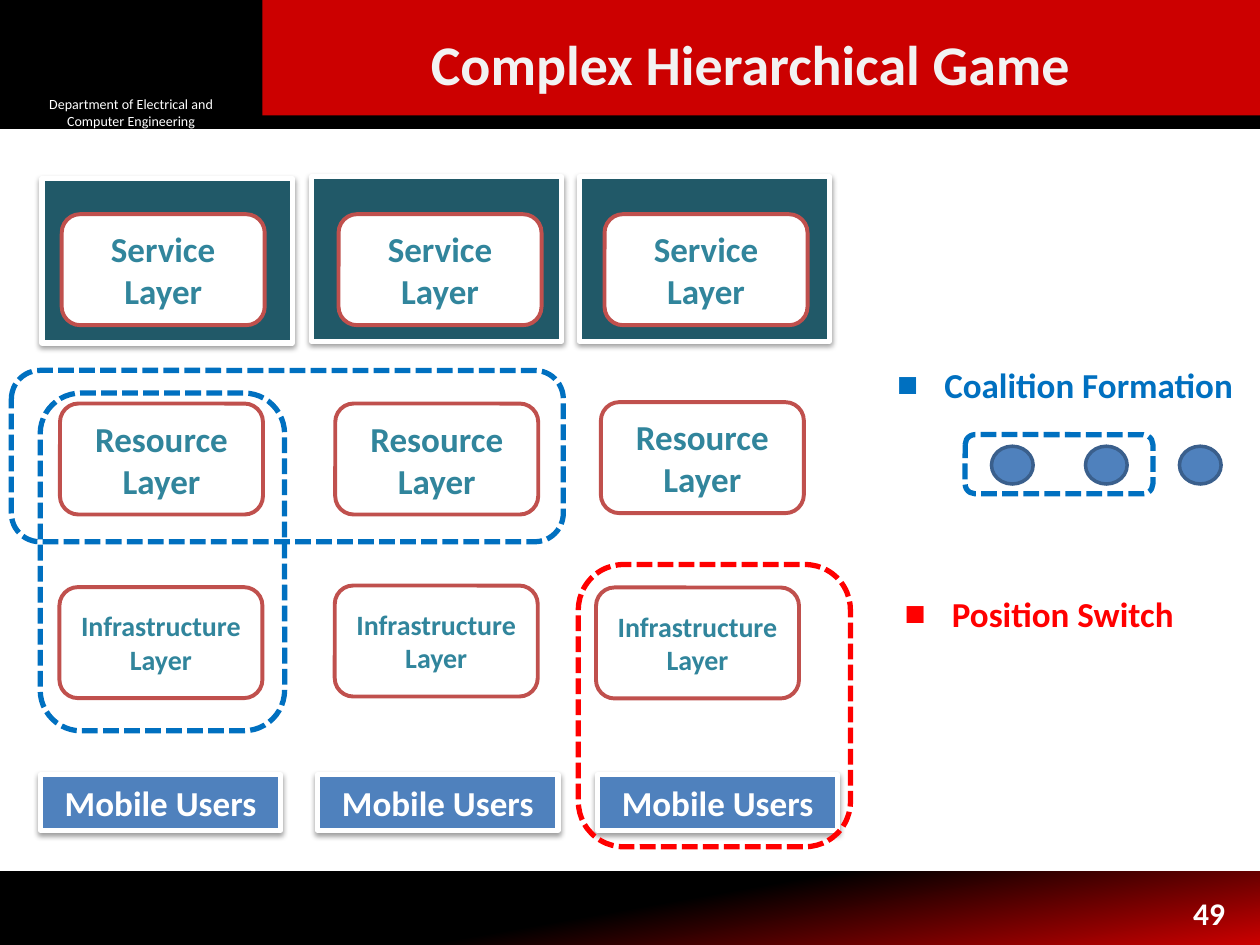
from dataclasses import dataclass

from lxml import etree
from pptx import Presentation
from pptx import util as u
from pptx.dml.color import RGBColor
from pptx.enum import dml, shapes, text
from pptx.oxml.ns import qn

KIND = shapes.MSO_SHAPE
ALIGN = text.PP_ALIGN


@dataclass(frozen=True)
class Theme:
    font: str = "Calibri"
    black: str = "000000"
    white: str = "FFFFFF"
    title: str = "F2F2F2"
    brand: str = "CC0000"
    panel: str = "215968"
    layer_text: str = "31859C"
    layer_line: str = "C0504D"
    user: str = "4F81BD"
    user_line: str = "3A5F8C"
    coalition: str = "0070C0"
    switch: str = "FF0000"
    title_size: int = 32
    body_size: int = 20
    number_size: int = 18
    small_size: int = 16
    tiny_size: int = 8


class Slide:
    def __init__(self, deck, theme):
        self.theme = theme
        self.page = deck.slides.add_slide(deck.slide_layouts[5])

    def set_text(self, box, words, size, color, align=ALIGN.CENTER, bold=True, bullet=None):
        frame = box.text_frame
        frame.word_wrap = True
        frame.vertical_anchor = text.MSO_ANCHOR.MIDDLE
        para = frame.paragraphs[0]
        para.add_run().text = words
        para.alignment = align
        if bullet:
            frame.margin_right = 0
            properties = para._p.get_or_add_pPr()
            properties.set("marL", str(u.Pt(27)))
            properties.set("indent", str(-u.Pt(27)))
            etree.SubElement(properties, qn("a:buFont"), typeface="Arial")
            etree.SubElement(properties, qn("a:buChar"), char=bullet)
        font = para.font
        font.name = self.theme.font
        font.size = u.Pt(size)
        font.bold = bold
        font.color.rgb = RGBColor.from_string(color)

    def shape(self, kind, place, fill=None, line=None, width=0):
        box = self.page.shapes.add_shape(kind, *map(u.Pt, place))
        box.shadow.inherit = False
        if fill:
            box.fill.solid()
            box.fill.fore_color.rgb = RGBColor.from_string(fill)
        else:
            box.fill.background()
        if line:
            box.line.color.rgb = RGBColor.from_string(line)
            box.line.width = u.Pt(width)
        else:
            box.line.fill.background()
        return box

    def title(self, words, place):
        box = self.page.shapes.title
        box.left, box.top, box.width, box.height = map(u.Pt, place)
        self.page.shapes._spTree.append(box._element)
        self.set_text(box, words, self.theme.title_size, self.theme.title)

    def label(self, words, place, size, color, align=ALIGN.LEFT, bullet=None):
        box = self.page.shapes.add_textbox(*map(u.Pt, place))
        self.set_text(box, words, size, color, align, bullet=bullet)

    def footer(self, place):
        fill = self.shape(KIND.RECTANGLE, place).fill
        fill.gradient()
        fill.gradient_angle = 280
        stops = ((0.5, self.theme.black), (1, self.theme.brand))
        for stop, (position, color) in zip(fill.gradient_stops, stops):
            stop.position = position
            stop.color.rgb = RGBColor.from_string(color)

    def card(self, place, fill):
        box = self.shape(KIND.RECTANGLE, place, fill, self.theme.white, 3)
        effects = box._element.spPr.find(qn("a:effectLst"))
        shadow = etree.SubElement(
            effects, qn("a:outerShdw"), blurRad=str(u.Pt(3.1)), dist=str(u.Pt(1.6)),
            dir="5400000", rotWithShape="0")
        color = etree.SubElement(shadow, qn("a:srgbClr"), val=self.theme.black)
        etree.SubElement(color, qn("a:alpha"), val="38000")
        return box

    def layer(self, words, left, top, size):
        box = self.shape(KIND.ROUNDED_RECTANGLE, (left, top, 116, 63.4),
                         self.theme.white, self.theme.layer_line, 2.25)
        self.set_text(box, words, size, self.theme.layer_text)

    def group_outline(self, place, color):
        box = self.shape(KIND.ROUNDED_RECTANGLE, place, None, color, 3)
        box.line.dash_style = dml.MSO_LINE.SQUARE_DOT


def main():
    theme = Theme()
    deck = Presentation()
    deck.slide_width, deck.slide_height = u.Pt(720), u.Pt(540)
    slide = Slide(deck, theme)

    slide.footer((0, 498, 720, 42))
    slide.shape(KIND.RECTANGLE, (0, 0.7, 720, 72), theme.black, theme.black, 2)
    department = slide.shape(KIND.RECTANGLE, (12, 55.4, 126, 18), theme.black)
    slide.set_text(department, "Department of Electrical and Computer Engineering",
                   theme.tiny_size, theme.white, bold=False)
    slide.shape(KIND.RECTANGLE, (150, 0, 570, 66), theme.brand)
    slide.title("Complex Hierarchical Game", (120, 12, 618, 48))

    for left, top in ((24, 102), (178, 101), (331, 101)):
        slide.card((left, top, 143, 94), theme.panel)
    for left in (23, 181.4, 341.3):
        users = slide.card((left, 442.8, 137.5, 31.7), theme.user)
        slide.set_text(users, "Mobile Users", theme.body_size, theme.white)

    layers = (
        ("Service Layer", theme.body_size, ((35.3, 122.4), (193.5, 122.4), (345.5, 122.4))),
        ("Resource Layer", theme.body_size, ((34.3, 230.6), (191.6, 230.6), (343.4, 229.8))),
        ("Infrastructure Layer", theme.small_size, ((34, 335.5), (191.3, 334.6), (340.6, 335.7))),
    )
    for words, size, places in layers:
        for left, top in places:
            slide.layer(words, left, top, size)

    slide.group_outline((6.5, 211.7, 315.4, 97.9), theme.coalition)
    slide.group_outline((23, 224.6, 139.7, 193), theme.coalition)
    slide.group_outline((330.5, 322.6, 155.5, 161.3), theme.switch)

    slide.label("Coalition Formation", (505.5, 204, 207, 31.7), theme.body_size,
                theme.coalition, bullet="■")
    slide.label("Position Switch", (509.8, 335, 198, 31.7), theme.body_size,
                theme.switch, bullet="■")
    for column in range(3):
        slide.shape(KIND.OVAL, (566.6 + 53.7 * column, 255, 23.8, 21.6),
                    theme.user, theme.user_line, 2)
    slide.group_outline((551.5, 248.4, 107.3, 33.8), theme.coalition)
    slide.label("49", (539.3, 507, 167.8, 29), theme.number_size, theme.white, ALIGN.RIGHT)

    deck.save("out.pptx")


if __name__ == "__main__":
    main()
